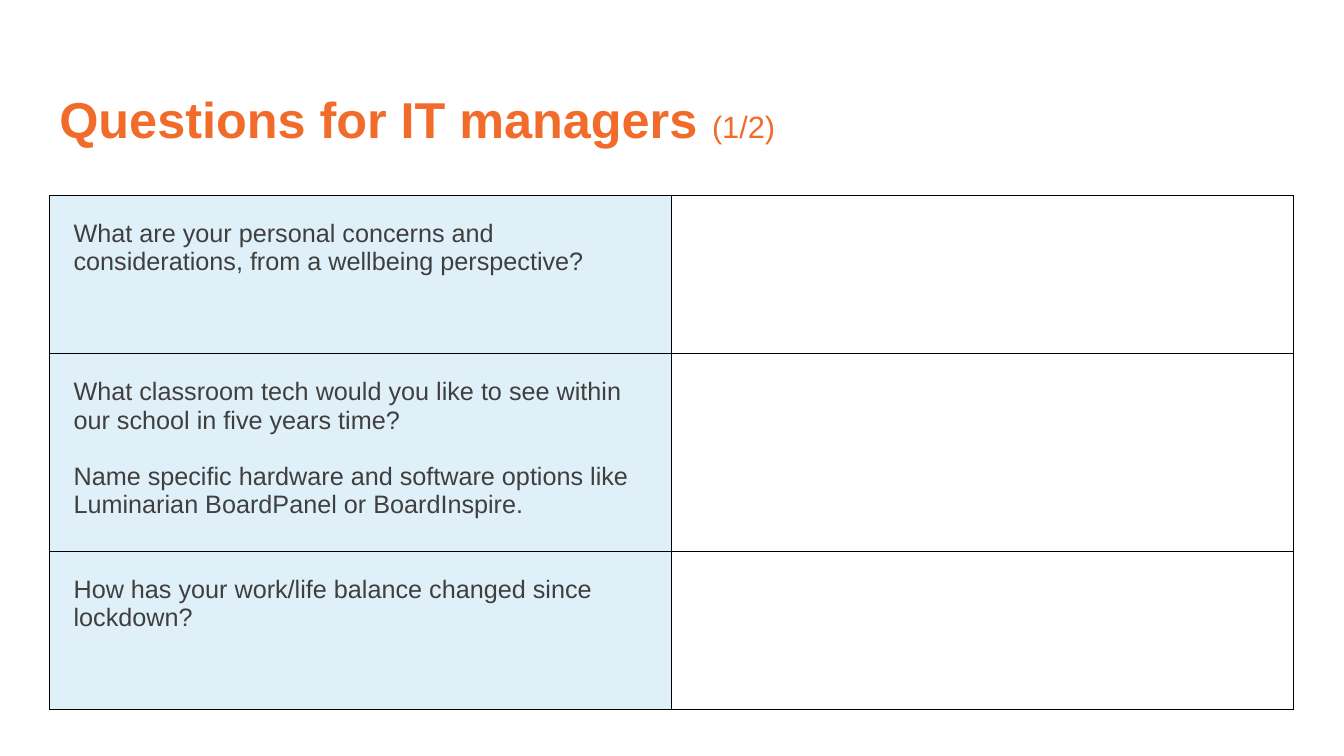
from lxml.etree import fromstring
from pptx import Presentation
from pptx.dml.color import RGBColor
from pptx.enum.text import MSO_ANCHOR
from pptx.oxml.ns import nsdecls
from pptx.util import Inches, Pt

WIDE, HIGH = 13.33, 7.5
LEFT, TOP = 0.49, 1.94
COL, PAD = 6.17, 0.24
ROWS = [1.57, 1.88, 1.57]
ORANGE, GREY, BLUE, WHITE, BLACK = "F16B2B", "3F3F3F", "E0F0F9", "FFFFFF", "000000"
TITLE = [("Questions for IT managers ", 36, True), ("(1/2)", 22, False)]
ASKS = [
    ["What are your personal concerns and considerations, from a wellbeing perspective?"],
    ["What classroom tech would you like to see within our school in five years time?",
     "Name specific hardware and software options like Luminarian BoardPanel or BoardInspire."],
    ["How has your work/life balance changed since lockdown?"],
]


def color(code):
    """Turn a hex string into a colour."""
    return RGBColor.from_string(code)


def write(para, text, size=18, tint=GREY, bold=False):
    """Add a formatted run to a paragraph."""
    run = para.add_run()
    run.text = text
    font = run.font
    font.name, font.size, font.bold = "Arial", Pt(size), bold
    font.color.rgb = color(tint)


def style(cell, tint):
    """Fill a cell and draw its four borders."""
    cell.fill.solid()
    cell.fill.fore_color.rgb = color(tint)
    props = cell._tc.get_or_add_tcPr()
    for spot, side in enumerate(("lnL", "lnR", "lnT", "lnB")):
        props.insert(spot, fromstring(
            f'<a:{side} {nsdecls("a")} w="{Pt(0.75)}"><a:solidFill>'
            f'<a:srgbClr val="{BLACK}"/></a:solidFill></a:{side}>'))


def head(slide):
    """Place the title."""
    box = slide.shapes.add_textbox(Inches(LEFT), Inches(0.49), Inches(11.5), Inches(1.45))
    frame = box.text_frame
    frame.word_wrap = True
    frame.vertical_anchor = MSO_ANCHOR.MIDDLE
    para = frame.paragraphs[0]
    para.line_spacing = 0.9
    for text, size, bold in TITLE:
        write(para, text, size=size, tint=ORANGE, bold=bold)


def grid(slide):
    """Place the table of questions with empty answer cells."""
    table = slide.shapes.add_table(len(ROWS), 2, Inches(LEFT), Inches(TOP),
                                   Inches(2 * COL), Inches(sum(ROWS))).table
    table.first_row = table.horz_banding = False
    for col in table.columns:
        col.width = Inches(COL)
    for row, tall, lines in zip(table.rows, ROWS, ASKS):
        row.height = Inches(tall)
        ask, reply = row.cells
        style(ask, BLUE)
        style(reply, WHITE)
        ask.margin_left = ask.margin_right = Inches(PAD)
        ask.margin_top = ask.margin_bottom = Inches(PAD)
        frame = ask.text_frame
        for spot, line in enumerate(lines):
            para = frame.add_paragraph() if spot else frame.paragraphs[0]
            if spot:
                para.space_before = Pt(20)
            write(para, line)


def main():
    """Build and save the slide."""
    deck = Presentation()
    deck.slide_width, deck.slide_height = Inches(WIDE), Inches(HIGH)
    slide = deck.slides.add_slide(deck.slide_layouts[6])
    head(slide)
    grid(slide)
    deck.save("out.pptx")


if __name__ == "__main__":
    main()
